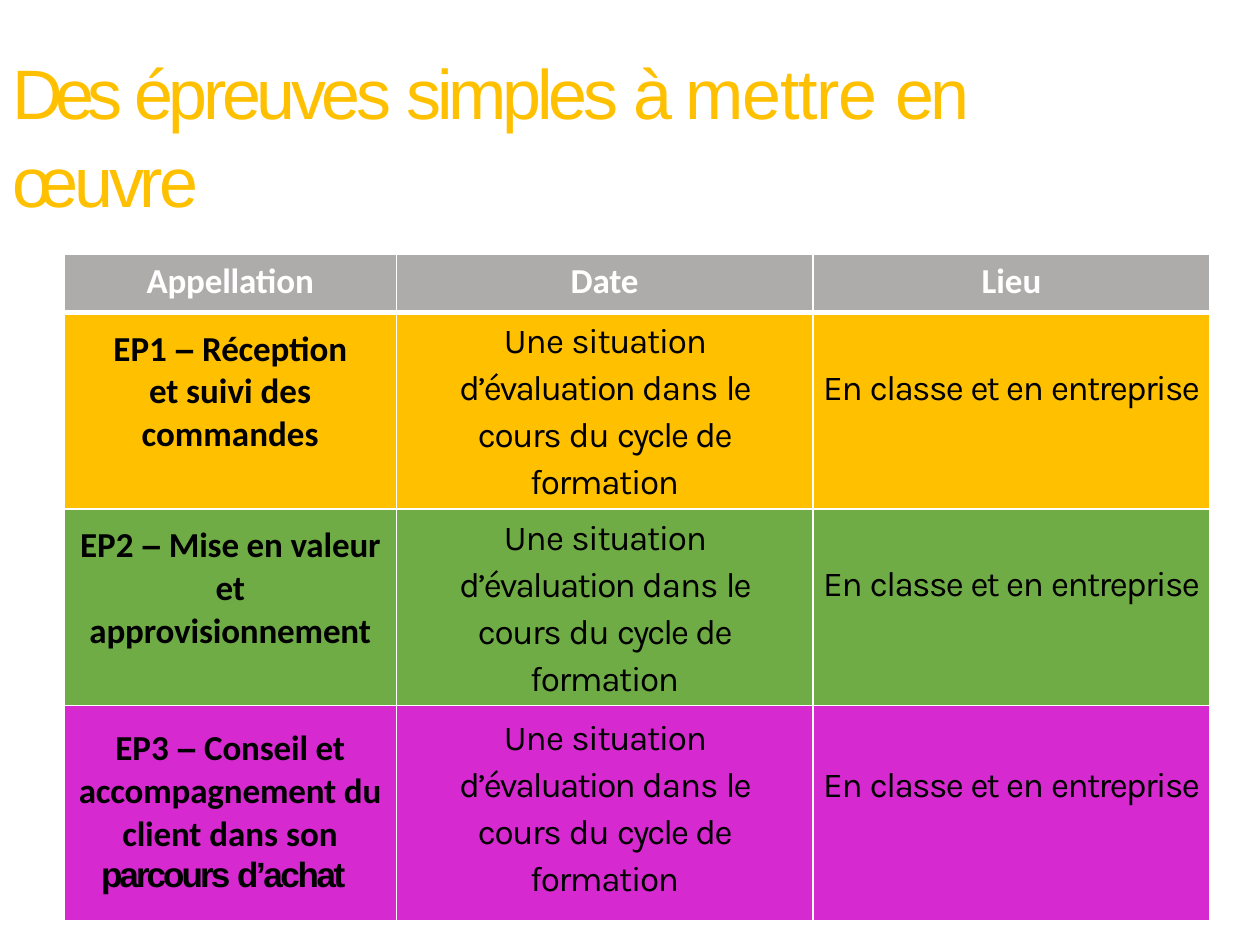
from lxml import etree
from pptx import Presentation
from pptx.dml.color import RGBColor
from pptx.enum.text import PP_ALIGN
from pptx.oxml.ns import qn
from pptx.util import Pt

CENTER = PP_ALIGN.CENTER
WHITE, BLACK, GOLD = "FFFFFF", "000000", "FFC000"


def color(hex_text):
    return RGBColor.from_string(hex_text)


def write(para, font, size, ink, bold, spans):
    """Add spans of (text, letter spacing in points[, other font])."""
    for text, spacing, *other in spans:
        span = para.add_run()
        span.text = text
        span.font.name = other[0] if other else font
        span.font.size = Pt(size)
        span.font.bold = bold
        span.font.color.rgb = color(ink)
        span._r.get_or_add_rPr().set("spc", str(round(spacing * 100)))


deck = Presentation()
deck.slide_width, deck.slide_height = Pt(720), Pt(540)
page = deck.slides.add_slide(deck.slide_layouts[6])

# Title
box = page.shapes.add_textbox(Pt(7), Pt(25), Pt(646), Pt(50))
frame = box.text_frame
frame.word_wrap = True
frame.margin_left = frame.margin_right = frame.margin_bottom = 0
frame.margin_top = Pt(1)
frame.paragraphs[0].line_spacing = 1.05
write(frame.paragraphs[0], "Arial", 40, GOLD, False, [
    ("Des ", -4.1), ("épreuves ", -2.5), ("simples ", -2.4), ("à ", -3.5),
    ("mettre ", -0.8), ("en ", -2.1), ("œuvre", -2.3)])

# Table content
headings = [("Appellation", -0.1), ("Date", -0.1), ("Lieu", 0)]
date = [("Une ", -0.5), ("situation ", -0.8), ("d’évaluation ", -1.1),
        ("dans ", -0.6), ("le ", -1.1), ("cours ", -0.8), ("du ", -0.6),
        ("cycle ", -1.2), ("de formation", -0.8)]
place = [("En ", -0.7), ("classe ", -0.9), ("et ", -1.2), ("en ", -0.7),
         ("entreprise", -0.9)]
dash = ("– ", -1.1, "Arial")
# Fill, side indent of the name, top margins of the three cells, name paragraphs
exams = [
    (GOLD, 18, (8.8, 1.8, 32),
     [[("EP1 ", 0), dash, ("Réception et ", -0.1), ("suivi des commandes", 0)]]),
    ("6FAC46", 8.5, (8.8, 1.9, 32),
     [[("EP2 ", 0), dash, ("Mise en valeur et approvisionnement", -0.1)]]),
    ("D629CF", 8, (12.4, 3.7, 34.5),
     [[("EP3 ", 0), dash, ("Conseil et accompagnement ", -0.1), ("du ", 0),
       ("client ", -0.1), ("dans son", 0)],
      [("parcours ", -1.7, "Arial"), ("d’achat", -1.4, "Arial")]]),
]

widths, heights = [190, 238, 227], [33, 92, 92, 123]
table = page.shapes.add_table(4, 3, Pt(36.5), Pt(145.5),
                              Pt(sum(widths)), Pt(sum(heights))).table
for column, width in zip(table.columns, widths):
    column.width = Pt(width)
for row, height in zip(table.rows, heights):
    row.height = Pt(height)

# Header row
for index, heading in enumerate(headings):
    cell = table.cell(0, index)
    cell.fill.solid()
    cell.fill.fore_color.rgb = color("AEABAB")
    cell.margin_top = Pt(3.4)
    para = cell.text_frame.paragraphs[0]
    para.alignment = CENTER
    write(para, "Calibri", 20, WHITE, True, [heading])

# Exam rows
for row, (fill, indent, tops, name) in enumerate(exams, 1):
    columns = [("Calibri", True, indent, None, name),
               ("Karla", False, 12, 1.15, [date]),
               ("Karla", False, 0, None, [place])]
    for index, (font, bold, side, leading, paragraphs) in enumerate(columns):
        cell = table.cell(row, index)
        cell.fill.solid()
        cell.fill.fore_color.rgb = color(fill)
        cell.margin_top = Pt(tops[index])
        for number, spans in enumerate(paragraphs):
            frame = cell.text_frame
            para = frame.add_paragraph() if number else frame.paragraphs[0]
            para.alignment = CENTER
            para.line_spacing = leading
            if number == 0:
                for edge in ("marL", "marR"):
                    para._p.get_or_add_pPr().set(edge, str(Pt(side)))
            write(para, font, 20, BLACK, bold, spans)

# Margins and white borders, with a thick rule under the header
for row in range(4):
    for index in range(3):
        cell = table.cell(row, index)
        cell.margin_left = cell.margin_right = cell.margin_bottom = 0
        properties = cell._tc.get_or_add_tcPr()
        rules = {"lnL": 1, "lnR": 1, "lnT": 3 if row == 1 else 1,
                 "lnB": 3 if row == 0 else 1}
        for place_in_order, (edge, weight) in enumerate(rules.items()):
            line = etree.Element(qn("a:" + edge), w=str(Pt(weight)))
            solid = etree.SubElement(line, qn("a:solidFill"))
            etree.SubElement(solid, qn("a:srgbClr"), val=WHITE)
            properties.insert(place_in_order, line)

deck.save("out.pptx")
